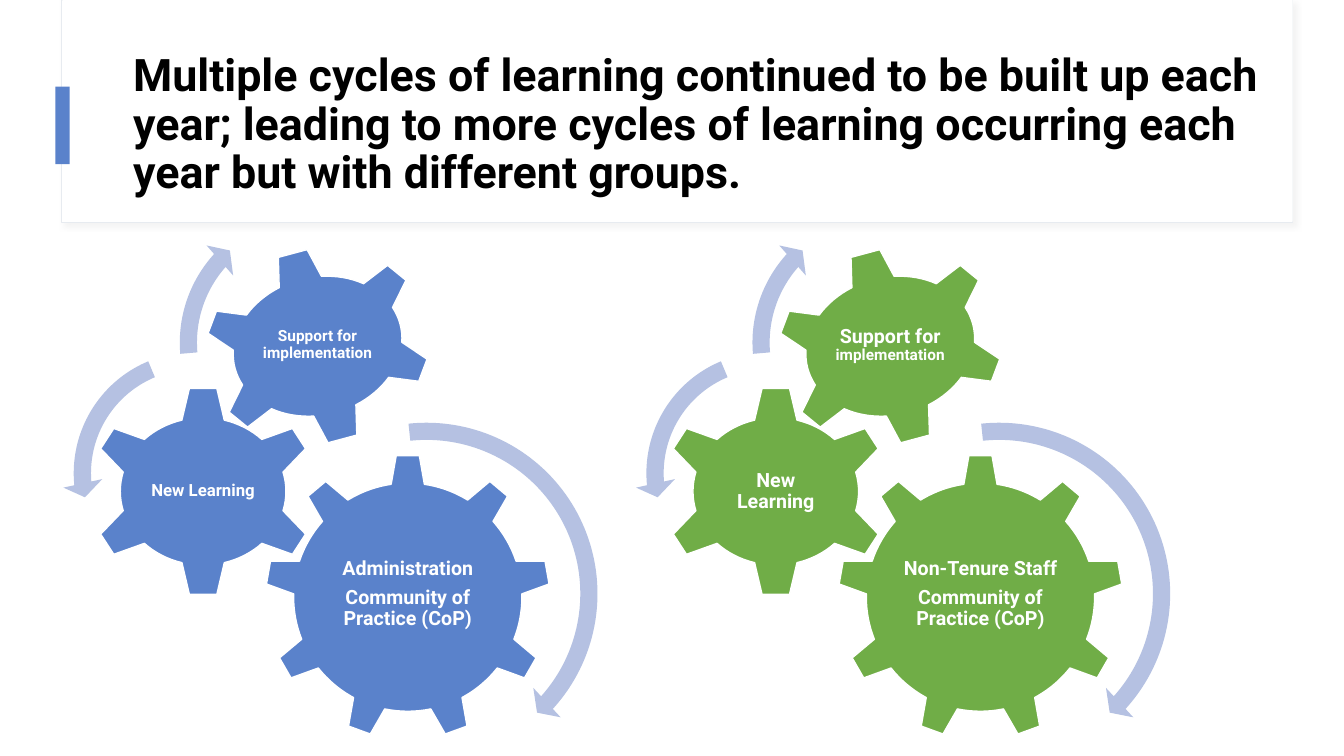
from dataclasses import dataclass
from lxml.etree import SubElement
from pptx import Presentation
from pptx.dml.color import RGBColor
from pptx.enum.shapes import MSO_SHAPE
from pptx.enum.text import MSO_ANCHOR, MSO_AUTO_SIZE, PP_ALIGN
from pptx.oxml.ns import qn
from pptx.util import Inches, Pt


@dataclass(frozen=True)
class Theme:
    font: str = "Roboto"
    black: RGBColor = RGBColor(0x00, 0x00, 0x00)
    white: RGBColor = RGBColor(0xFF, 0xFF, 0xFF)
    border: RGBColor = RGBColor(0xE7, 0xEB, 0xF0)
    blue: RGBColor = RGBColor(0x5A, 0x82, 0xCB)
    green: RGBColor = RGBColor(0x70, 0xAD, 0x47)
    arrow: RGBColor = RGBColor(0xB5, 0xC1, 0xE2)
    shadow: str = "D9D9D9"
    title_size: int = 32
    large: int = 14
    medium: int = 12
    small: int = 11


theme = Theme()


def add_filled(shapes, kind, box, fill, line=None, width=1):
    shape = shapes.add_shape(kind, *map(Inches, box))
    shape.shadow.inherit = False
    shape.fill.solid()
    shape.fill.fore_color.rgb = fill
    if line is None:
        shape.line.fill.background()
    else:
        shape.line.color.rgb = line
        shape.line.width = Pt(width)
    return shape


def add_label(shapes, box, paragraphs):
    label = shapes.add_textbox(*map(Inches, box))
    frame = label.text_frame
    frame.word_wrap = True
    frame.vertical_anchor = MSO_ANCHOR.MIDDLE
    frame.margin_left = frame.margin_right = Inches(0.02)
    frame.margin_top = frame.margin_bottom = Inches(0.02)
    for index, runs in enumerate(paragraphs):
        paragraph = frame.add_paragraph() if index else frame.paragraphs[0]
        paragraph.alignment = PP_ALIGN.CENTER
        paragraph.line_spacing = 0.9
        paragraph.space_after = Pt(5)
        paragraph.font.name = theme.font
        paragraph.font.bold = True
        paragraph.font.color.rgb = theme.white
        for text, size in runs:
            run = paragraph.add_run()
            run.text = text
            run.font.size = Pt(size)


presentation = Presentation()
presentation.slide_width = Inches(13.33)
presentation.slide_height = Inches(7.5)
slide = presentation.slides.add_slide(presentation.slide_layouts[5])

panel = add_filled(slide.shapes, MSO_SHAPE.RECTANGLE, (0.61, 0, 12.21, 2.21),
                   theme.white, theme.border, 0.75)
effects = panel.element.spPr.find(qn("a:effectLst"))
shadow = SubElement(effects, qn("a:outerShdw"), blurRad=str(Pt(4)), dist=str(Pt(3)),
                    dir="2700000", algn="tl", rotWithShape="0")
shadow_color = SubElement(shadow, qn("a:srgbClr"), val=theme.shadow)
SubElement(shadow_color, qn("a:alpha"), val="30000")
add_filled(slide.shapes, MSO_SHAPE.RECTANGLE, (0.62, 0, 12.2, 2.2), theme.white)
accent = add_filled(slide.shapes, MSO_SHAPE.RECTANGLE, (0.55, 0.86, 0.14, 0.77), theme.blue)

title = slide.shapes.title
accent.element.addnext(title.element)
title.left, title.top, title.width, title.height = map(Inches, (1.22, 0.6, 11.65, 1.29))
title.text_frame.text = (
    "Multiple cycles of learning continued to be built up each year; leading to "
    "more cycles of learning occurring each year but with different groups."
)
title.text_frame.word_wrap = True
title.text_frame.auto_size = MSO_AUTO_SIZE.NONE
title.text_frame.vertical_anchor = MSO_ANCHOR.MIDDLE
heading = title.text_frame.paragraphs[0]
heading.alignment = PP_ALIGN.LEFT
heading.line_spacing = 0.9
heading.font.name = theme.font
heading.font.size = Pt(theme.title_size)
heading.font.bold = True
heading.font.color.rgb = theme.black

gears = [
    (MSO_SHAPE.GEAR_9, (2.63, 4.51, 2.83, 2.83), 0, (3.2, 5.17, 1.69, 1.45)),
    (MSO_SHAPE.GEAR_6, (0.88, 3.83, 2.27, 2.09), 0, (1.43, 4.36, 1.17, 1.03)),
    (MSO_SHAPE.GEAR_6, (2.01, 2.46, 2.28, 1.95), 345, (2.53, 2.86, 1.24, 1.13)),
]
arrows = [
    (MSO_SHAPE.CIRCULAR_ARROW, (2.42, 4.08, 3.62, 3.62),
     (0.047, 2.99, 25.271, 158.379, 0.055)),
    (MSO_SHAPE.LEFT_CIRCULAR_ARROW, (0.62, 3.38, 2.63, 2.63),
     (0.065, 4.3, 104.891, 148.378, 0.075)),
    (MSO_SHAPE.CIRCULAR_ARROW, (1.67, 1.98, 2.84, 2.84),
     (0.06, 3.941, 133.138, 105.082, 0.07)),
]
community = [("Community of Practice (CoP)", theme.large)]
cycles = [
    (5.68, theme.green, [
        [[("Non-Tenure Staff", theme.large)], community],
        [[("New Learning", theme.large)]],
        [[("Support for ", theme.large), ("implementation", theme.small)]],
    ]),
    (0, theme.blue, [
        [[("Administration", theme.large)], community],
        [[("New Learning", theme.medium)]],
        [[("Support for implementation", theme.small)]],
    ]),
]

for offset, color, labels in cycles:
    group = slide.shapes.add_group_shape()
    for (kind, (left, *rest), rotation, (label_left, *label_rest)), label in zip(gears, labels):
        gear = add_filled(group.shapes, kind, (left + offset, *rest), color, theme.white)
        gear.rotation = rotation
        add_label(group.shapes, (label_left + offset, *label_rest), label)
    for kind, (left, *rest), adjustments in arrows:
        arrow = add_filled(group.shapes, kind, (left + offset, *rest), theme.arrow)
        for index, value in enumerate(adjustments):
            arrow.adjustments[index] = value

presentation.save("out.pptx")
